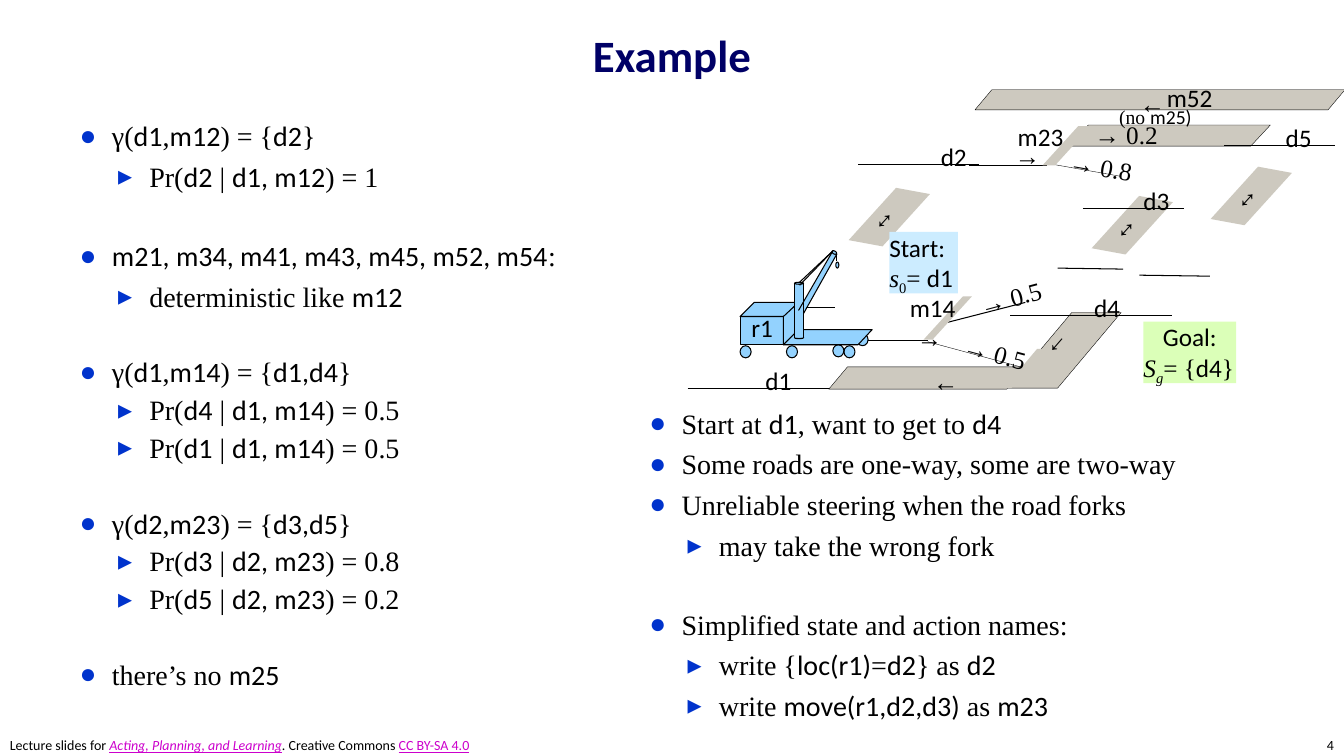
from dataclasses import dataclass

from lxml.etree import SubElement
from pptx import Presentation
from pptx.dml.color import RGBColor
from pptx.enum.shapes import MSO_CONNECTOR as Connector, MSO_SHAPE as Shape
from pptx.enum.text import MSO_ANCHOR as Anchor, MSO_AUTO_SIZE as Fit, PP_ALIGN as Align
from pptx.oxml.ns import qn
from pptx.util import Inches, Pt


@dataclass(frozen=True)
class Theme:
    ink: str = "000000"
    heading: str = "000066"
    bullet: str = "0033CC"
    link: str = "CC00CC"
    road: str = "CDC9BF"
    crane: str = "93D2FE"
    start: str = "CCECFF"
    goal: str = "DBFFB8"
    serif: str = "Times New Roman"
    sans: str = "Calibri"
    arrow: str = "Arial"
    title: int = 32
    body: int = 20
    label: int = 18
    note: int = 14
    footer: int = 10


theme = Theme()


def write(para, markup, size, font=theme.serif, color=theme.ink):
    for index, piece in enumerate(markup.split("`")):
        if piece:
            span = para.add_run()
            span.text = piece
            span.font.size = Pt(size)
            span.font.name = theme.sans if index % 2 else font
            span.font.color.rgb = RGBColor.from_string(color)
    return para.runs


def finish(shape, fill, weight):
    shape.shadow.inherit = False
    shape.fill.solid()
    shape.fill.fore_color.rgb = RGBColor.from_string(fill)
    if weight:
        shape.line.color.rgb = RGBColor.from_string(theme.ink)
        shape.line.width = Pt(weight)
    else:
        shape.line.fill.background()


deck = Presentation()
deck.slide_width, deck.slide_height = Inches(13.33), Inches(7.5)
page = deck.slides.add_slide(deck.slide_layouts[3])

title = page.shapes.title
title.left, title.top, title.width, title.height = map(Inches, (0.22, 0.25, 12.89, 0.61))
title.text_frame.vertical_anchor = Anchor.BOTTOM
title.text_frame.auto_size = Fit.NONE
heading = title.text_frame.paragraphs[0]
heading.alignment = Align.CENTER
write(heading, "`Example`", theme.title, color=theme.heading)[0].font.bold = True

transitions = [
    (0, 5, "γ(`d1`,`m12`) = {`d2`}"),
    (1, 5, "Pr(`d2` | `d1, m12`) = 1"),
    (0, 32.5, "`m21, m34, m41, m43, m45, m52, m54`:"),
    (1, 5, "deterministic like `m12`"),
    (0, 30, "γ(`d1`,`m14`) = {`d1,d4`}"),
    (1, 3, "Pr(`d4` | `d1, m14`) = 0.5"),
    (1, 3, "Pr(`d1` | `d1, m14`) = 0.5"),
    (0, 30, "γ(`d2`,`m23`) = {`d3,d5`}"),
    (1, 3, "Pr(`d3` | `d2, m23`) = 0.8"),
    (1, 3, "Pr(`d5` | `d2, m23`) = 0.2"),
    (0, 30, "there’s no `m25`"),
]
remarks = [
    (0, 5, "Start at `d1`, want to get to `d4`"),
    (0, 5, "Some roads are one-way, some are two-way"),
    (0, 5, "Unreliable steering when the road forks"),
    (1, 5, "may take the wrong fork"),
    (0, 32.5, "Simplified state and action names:"),
    (1, 5, "write {`loc(r1)`=`d2`} as `d2`"),
    (1, 5, "write `move(r1,d2,d3)` as `m23`"),
]
for slot, bounds, items in (
    (1, (0.69, 1.13, 4.93, 6.37), transitions),
    (2, (6.34, 3.98, 5.65, 3.33), remarks),
):
    body = page.placeholders[slot]
    body.left, body.top, body.width, body.height = map(Inches, bounds)
    frame = body.text_frame
    frame.auto_size = Fit.NONE
    for index, (level, gap, markup) in enumerate(items):
        para = frame.add_paragraph() if index else frame.paragraphs[0]
        para.level = level
        para.space_before = Pt(gap)
        properties = para._p.get_or_add_pPr()
        properties.set("marL", str(Inches((0.32, 0.69)[level])))
        properties.set("indent", str(-Inches((0.32, 0.31)[level])))
        tint = SubElement(properties, qn("a:buClr"))
        SubElement(tint, qn("a:srgbClr"), val=theme.bullet)
        SubElement(properties, qn("a:buChar"), char="●▸"[level])
        write(para, markup, theme.body)

slab, disc, block = Shape.PARALLELOGRAM, Shape.OVAL, Shape.RECTANGLE
back_lines = [
    (7.58, 3.05, 8.28, 3.05, 0.75), (9.61, 1.64, 10.38, 1.64, 0.75),
    (10.44, 1.63, 11.12, 1.75, 0.25), (10.49, 2.66, 11.14, 2.67, 0.75),
    (11.3, 2.73, 12, 2.74, 0.75), (8.51, 1.63, 9.71, 1.63, 0.75),
    (8.5, 3.38, 9.2, 3.38, 0.75), (9.2, 3.39, 10.16, 3.65, 0.25),
    (6.82, 3.85, 8.22, 3.85, 0.75), (9.39, 3.2, 10.17, 3, 0.75),
]
roads = [
    (slab, 10.6, 1.24, 2, 0.21, 0.25, 0.93, 0), (slab, 10.34, 1.25, 0.48, 0.39, 0, 0.91, 0),
    (slab, 9.67, 0.89, 3.67, 0.2, 0.25, 0.84, 0), (slab, 8.22, 3.64, 1.95, 0.22, 0.25, 0.84, 0),
    (slab, 10, 3.1, 1.12, 0.75, 0.25, 0.84, 0), (slab, 9.96, 3.46, 0.4, 0.39, 0, 0.84, 0),
    (slab, 9.16, 2.94, 0.48, 0.43, 0, 0.91, 0), (slab, 10.17, 3.31, 0.88, 0.29, 0, 0.62, 310.8),
] + [(slab, x, y, 0.88, 0.29, 0, 0.62, 312.2) for x, y in ((11.97, 1.8), (10.79, 2.09), (8.38, 2.01))]
front_lines = [
    (12.14, 1.44, 13.24, 1.44, 0.75), (10.74, 2.07, 11.74, 2.07, 0.75),
    (10.02, 3.13, 11.62, 3.13, 0.75),
]
wheels = [
    (disc, x, y, 0.11, 0.12, 0.75, None, 0)
    for x, y in ((8.5, 3.31), (7.34, 3.43), (8.37, 3.43), (8.26, 3.42), (7.8, 3.43))
]
cab = (block, 7.34, 3.14, 0.44, 0.28, 0.75, None, 0)
chassis = [
    [(7.78, 3.14), (7.34, 3.14), (7.48, 3), (7.92, 3)],
    [(7.77, 3.14), (7.92, 3), (7.92, 3.28), (7.77, 3.42)],
    [(7.77, 3.42), (8.51, 3.42), (8.65, 3.27), (7.92, 3.27)],
]
mast = [
    (disc, 7.88, 3.34, 0.09, 0.02, 0.75, None, 0), (block, 7.88, 2.81, 0.09, 0.54, 0, None, 0),
    (disc, 7.88, 2.8, 0.09, 0.02, 0.75, None, 0), (block, 8.09, 2.46, 0.05, 0.68, 0, None, 30),
    (disc, 8.25, 2.49, 0.05, 0.03, 0.75, None, 30), (disc, 8.29, 2.6, 0.03, 0.06, 0.75, None, 0),
]
cables = [
    (7.97, 3.35, 7.97, 2.81, 0.75), (7.88, 3.35, 7.88, 2.81, 0.75),
    (7.93, 2.8, 8.26, 2.49, 0.75), (7.93, 2.83, 8.26, 2.49, 0.75),
    (8.3, 2.59, 8.3, 2.51, 0.75), (7.97, 3.11, 8.3, 2.52, 0.75),
    (7.92, 3.08, 8.26, 2.49, 0.75),
]
for lines, solids, outlines in (
    (back_lines, roads, []),
    (front_lines, wheels + [cab], chassis),
    ([], mast, []),
    (cables, [], []),
):
    for *ends, weight in lines:
        line = page.shapes.add_connector(Connector.STRAIGHT, *map(Inches, ends))
        line.line.color.rgb = RGBColor.from_string(theme.ink)
        line.line.width = Pt(weight)
        SubElement(line._element.spPr, qn("a:effectLst"))
    for kind, x, y, width, height, weight, slant, turn in solids:
        solid = page.shapes.add_shape(kind, *map(Inches, (x, y, width, height)))
        finish(solid, theme.road if kind == slab else theme.crane, weight)
        solid.rotation = turn
        if slant:
            solid.adjustments[0] = slant
            if turn:
                solid._element.spPr.find(qn("a:xfrm")).set("flipV", "1")
    for corners in outlines:
        points = [(Inches(x), Inches(y)) for x, y in corners]
        builder = page.shapes.build_freeform(*points[0])
        builder.add_line_segments(points[1:], close=True)
        finish(builder.convert_to_shape(), theme.crane, 0.75)

for x, y, width, fill, name, symbol, index, state, align in (
    (8.82, 2.3, 0.68, theme.start, "Start:", "s", "0", "= `d1`", Align.LEFT),
    (11.34, 3.19, 0.92, theme.goal, "Goal:", "S", "g", "= {`d4`}", Align.CENTER),
):
    card = page.shapes.add_shape(block, *map(Inches, (x, y, width, 0.61)))
    finish(card, fill, 0)
    frame = card.text_frame
    frame.margin_left = frame.margin_right = frame.margin_top = frame.margin_bottom = 0
    frame.word_wrap = False
    frame.vertical_anchor = Anchor.TOP
    frame.paragraphs[0].alignment = align
    write(frame.paragraphs[0], f"`{name}`", theme.label)
    formula = frame.add_paragraph()
    formula.alignment = Align.LEFT
    write(formula, symbol, theme.label)[0].font.italic = True
    subscript = write(formula, index, theme.label)[-1]
    subscript.font.italic = index == "g"
    subscript._r.get_or_add_rPr().set("baseline", "-25000")
    write(formula, state, theme.label)

for markup, x, y, turn, size, font in [
    (f"`{name}`", x, y, 0, theme.label, theme.serif)
    for name, x, y in (
        ("d1", 7.72, 3.77), ("d2", 9.46, 1.55), ("d3", 11.47, 1.99), ("d4", 10.98, 3.05),
        ("d5", 12.88, 1.36), ("r1", 7.56, 3.25), ("m23", 10.32, 1.35), ("m52", 11.8, 0.97),
        ("m14", 9.25, 3.05),
    )
] + [
    (text, x, y, turn, theme.label, theme.serif)
    for text, x, y, turn in (
        ("→ 0.2", 11.17, 1.33, 0), ("→ 0.8", 10.92, 1.65, 10), ("→ 0.5", 10.02, 2.95, 345),
        ("→ 0.5", 9.87, 3.5, 15), ("←", 11.43, 1.03, 0), ("←", 9.38, 3.78, 0),
        ("→", 10.53, 3.46, 130.8), ("↔", 8.73, 2.16, 312.2), ("↔", 11.13, 2.25, 312.2),
        ("↔", 12.33, 1.95, 312.2),
    )
] + [
    ("→", 10.19, 1.54, 0, theme.label, theme.arrow),
    ("→", 9.22, 3.35, 0, theme.label, theme.arrow),
    ("(no `m25)`", 11.46, 1.16, 0, theme.note, theme.serif),
]:
    label = page.shapes.add_textbox(*map(Inches, (x - 0.5, y - 0.2, 1, 0.4)))
    label.rotation = turn
    label.text_frame.word_wrap = False
    label.text_frame.vertical_anchor = Anchor.MIDDLE
    label.text_frame.paragraphs[0].alignment = Align.CENTER
    write(label.text_frame.paragraphs[0], markup, size, font)

credit = [
    ("Lecture slides for ", False), ("Acting, Planning, and Learning", True),
    (". Creative Commons ", False), ("CC BY-SA 4.0", True),
]
for x, width, align, pieces in (
    (0, 4.97, Align.LEFT, credit),
    (12.97, 0.36, Align.RIGHT, [("4", False)]),
):
    footer = page.shapes.add_textbox(*map(Inches, (x, 7.29, width, 0.21)))
    frame = footer.text_frame
    frame.margin_top = frame.margin_bottom = Inches(0.02)
    frame.word_wrap = False
    para = frame.paragraphs[0]
    para.alignment = align
    for text, marked in pieces:
        span = write(para, f"`{text}`", theme.footer, color=theme.link if marked else theme.ink)[-1]
        span.font.underline = marked
        span.font.italic = text.startswith("Acting")

deck.save("out.pptx")
